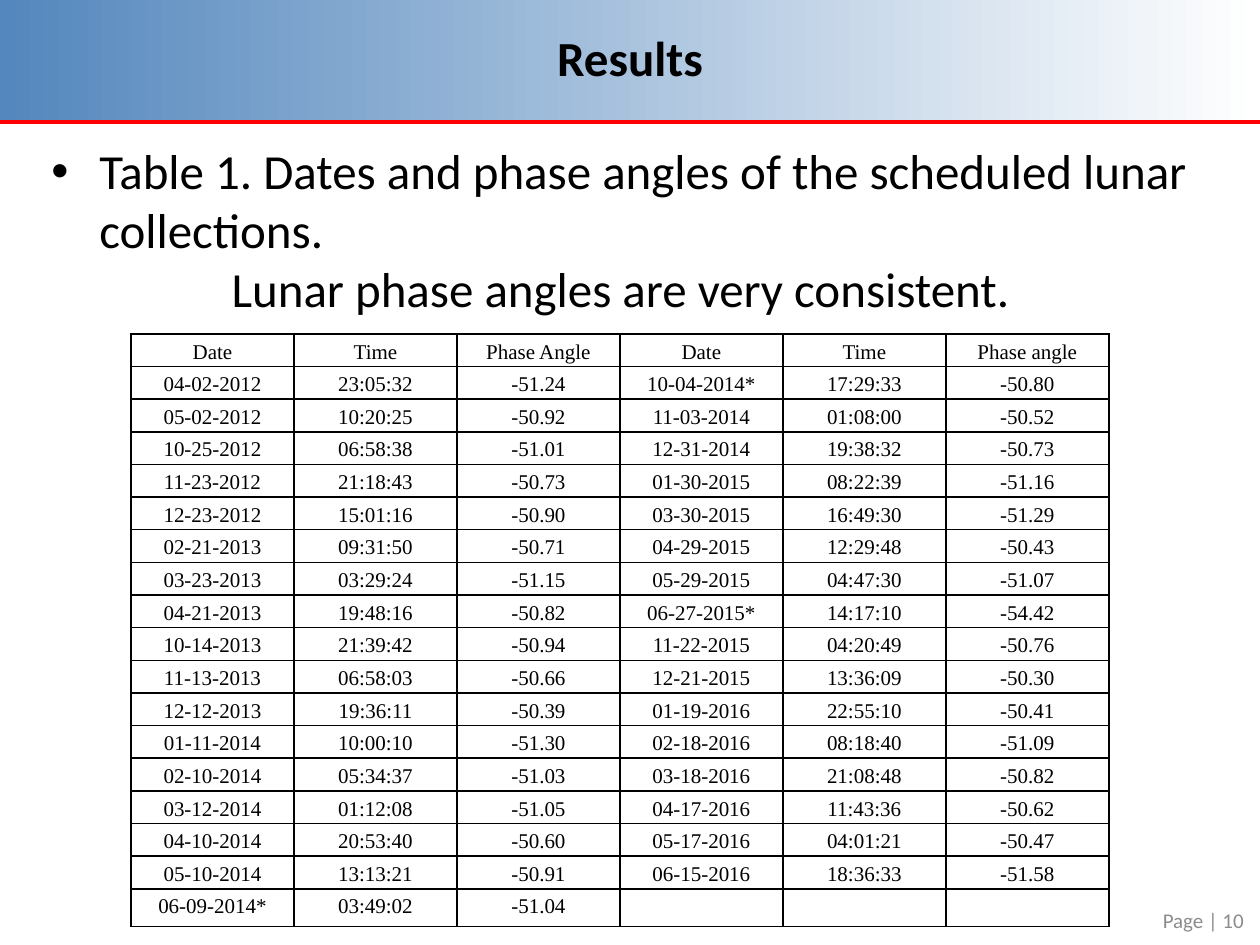
from dataclasses import dataclass

import pptx
import pptx.dml.color
import pptx.enum.shapes
import pptx.enum.text
import pptx.oxml
import pptx.oxml.ns
import pptx.util
from pptx.util import Inches

PP_ALIGN = pptx.enum.text.PP_ALIGN
ANCHOR = pptx.enum.text.MSO_ANCHOR


@dataclass(frozen=True)
class Theme:
    heading_font: str = "Calibri"
    table_font: str = "Times New Roman"
    heading_size: int = 28
    small_size: int = 12
    table_leading: int = 17
    banner_rule: float = 2.25
    table_rule: float = 1
    ink: str = "000000"
    muted: str = "8C8C8C"
    banner_start: str = "5487BD"
    banner_end: str = "FFFFFF"
    accent: str = "FF0000"


THEME = Theme()

PHASE_ANGLES = [
    ("Date", "Time", "Phase Angle", "Date", "Time", "Phase angle"),
    ("04-02-2012", "23:05:32", "-51.24", "10-04-2014*", "17:29:33", "-50.80"),
    ("05-02-2012", "10:20:25", "-50.92", "11-03-2014", "01:08:00", "-50.52"),
    ("10-25-2012", "06:58:38", "-51.01", "12-31-2014", "19:38:32", "-50.73"),
    ("11-23-2012", "21:18:43", "-50.73", "01-30-2015", "08:22:39", "-51.16"),
    ("12-23-2012", "15:01:16", "-50.90", "03-30-2015", "16:49:30", "-51.29"),
    ("02-21-2013", "09:31:50", "-50.71", "04-29-2015", "12:29:48", "-50.43"),
    ("03-23-2013", "03:29:24", "-51.15", "05-29-2015", "04:47:30", "-51.07"),
    ("04-21-2013", "19:48:16", "-50.82", "06-27-2015*", "14:17:10", "-54.42"),
    ("10-14-2013", "21:39:42", "-50.94", "11-22-2015", "04:20:49", "-50.76"),
    ("11-13-2013", "06:58:03", "-50.66", "12-21-2015", "13:36:09", "-50.30"),
    ("12-12-2013", "19:36:11", "-50.39", "01-19-2016", "22:55:10", "-50.41"),
    ("01-11-2014", "10:00:10", "-51.30", "02-18-2016", "08:18:40", "-51.09"),
    ("02-10-2014", "05:34:37", "-51.03", "03-18-2016", "21:08:48", "-50.82"),
    ("03-12-2014", "01:12:08", "-51.05", "04-17-2016", "11:43:36", "-50.62"),
    ("04-10-2014", "20:53:40", "-50.60", "05-17-2016", "04:01:21", "-50.47"),
    ("05-10-2014", "13:13:21", "-50.91", "06-15-2016", "18:36:33", "-51.58"),
    ("06-09-2014*", "03:49:02", "-51.04", "", "", ""),
]


def rgb(value):
    return pptx.dml.color.RGBColor.from_string(value)


def add_run(paragraph, text, size, color=THEME.ink, font=THEME.heading_font, bold=False):
    run = paragraph.add_run()
    run.text = text
    run.font.name = font
    run.font.size = pptx.util.Pt(size)
    run.font.bold = bold
    run.font.color.rgb = rgb(color)


def add_text_frame(slide, left, top, width, height, anchor=ANCHOR.MIDDLE):
    frame = slide.shapes.add_textbox(
        Inches(left), Inches(top), Inches(width), Inches(height)).text_frame
    frame.word_wrap = True
    frame.vertical_anchor = anchor
    return frame


def add_banner(slide):
    banner = slide.shapes.add_shape(
        pptx.enum.shapes.MSO_SHAPE.RECTANGLE,
        Inches(0), Inches(-0.01), Inches(10), Inches(0.97))
    banner.shadow.inherit = False
    banner.line.fill.background()
    banner.fill.gradient()
    banner.fill.gradient_angle = 0
    for stop, color in zip(banner.fill.gradient_stops,
                           (THEME.banner_start, THEME.banner_end)):
        stop.color.rgb = rgb(color)

    rule = slide.shapes.add_connector(
        pptx.enum.shapes.MSO_CONNECTOR.STRAIGHT,
        Inches(0), Inches(0.97), Inches(10), Inches(0.97))
    rule.line.color.rgb = rgb(THEME.accent)
    rule.line.width = pptx.util.Pt(THEME.banner_rule)
    rule.element.spPr.append(pptx.oxml.parse_xml(
        f"<a:effectLst {pptx.oxml.ns.nsdecls('a')}/>"))


def add_line_of_text(slide, box, text, size, align, color=THEME.ink, bold=False):
    paragraph = add_text_frame(slide, *box).paragraphs[0]
    paragraph.alignment = align
    add_run(paragraph, text, size, color, bold=bold)


def indent(paragraph, margin, first_line=0.0):
    properties = paragraph._p.get_or_add_pPr()
    properties.set("marL", str(Inches(margin)))
    properties.set("indent", str(Inches(first_line)))
    return properties


def add_caption(slide):
    frame = add_text_frame(slide, 0.31, 1.07, 9.48, 6.03, ANCHOR.TOP)
    caption = frame.paragraphs[0]
    properties = indent(caption, 0.38, -0.38)
    for bullet in ('buFont {} typeface="Arial"', 'buChar {} char="•"'):
        properties.append(pptx.oxml.parse_xml(
            f"<a:{bullet.format(pptx.oxml.ns.nsdecls('a'))}/>"))
    add_run(caption, "Table 1. Dates and phase angles of the scheduled lunar collections.",
            THEME.heading_size)

    finding = frame.add_paragraph()
    indent(finding, 1.43)
    add_run(finding, "Lunar phase angles are very consistent.", THEME.heading_size)


def set_borders(cell):
    properties = cell._tc.get_or_add_tcPr()
    for side in "LRTB":
        properties.append(pptx.oxml.parse_xml(
            f"<a:ln{side} {pptx.oxml.ns.nsdecls('a')} w=\"{pptx.util.Pt(THEME.table_rule)}\">"
            f'<a:solidFill><a:srgbClr val="{THEME.ink}"/></a:solidFill></a:ln{side}>'))


def fill_cell(cell, text):
    set_borders(cell)
    cell.fill.background()
    cell.margin_left = cell.margin_right = Inches(0.07)
    cell.margin_top = cell.margin_bottom = 0
    paragraph = cell.text_frame.paragraphs[0]
    paragraph.alignment = PP_ALIGN.CENTER
    paragraph.line_spacing = pptx.util.Pt(THEME.table_leading)
    if text:
        add_run(paragraph, text, THEME.small_size, font=THEME.table_font)


def add_phase_table(slide):
    table = slide.shapes.add_table(
        len(PHASE_ANGLES), len(PHASE_ANGLES[0]),
        Inches(1.04), Inches(2.65), Inches(7.76), Inches(4.67)).table
    table.first_row = False
    table.horz_banding = False
    for row, record in zip(table.rows, PHASE_ANGLES):
        for cell, text in zip(row.cells, record):
            fill_cell(cell, text)


def main():
    presentation = pptx.Presentation()
    presentation.slide_width = Inches(10)
    presentation.slide_height = Inches(7.5)
    slide = presentation.slides.add_slide(presentation.slide_layouts[6])

    add_banner(slide)
    add_line_of_text(slide, (0.5, 0, 9, 0.9), "Results", THEME.heading_size,
                     PP_ALIGN.CENTER, bold=True)
    add_caption(slide)
    add_line_of_text(slide, (7.64, 7.1, 2.33, 0.4), "Page | 10", THEME.small_size,
                     PP_ALIGN.RIGHT, THEME.muted)
    add_phase_table(slide)
    presentation.save("out.pptx")


if __name__ == "__main__":
    main()
